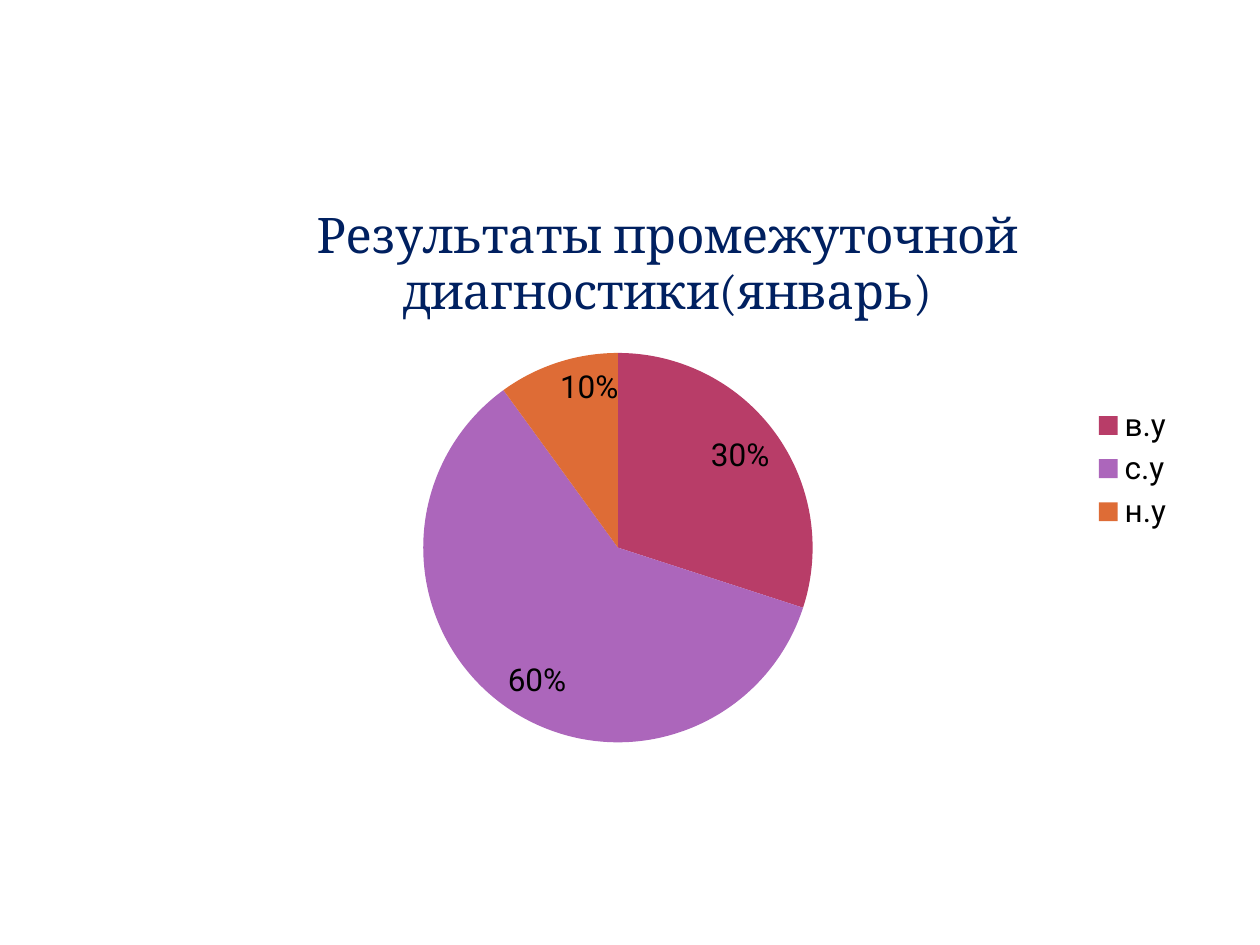
from dataclasses import dataclass

from pptx import Presentation
from pptx.chart.data import CategoryChartData
from pptx.dml.color import RGBColor
from pptx.enum import chart as ch
from pptx.util import Inches, Pt

NAVY = RGBColor(0x00, 0x20, 0x60)
BLACK = RGBColor(0x00, 0x00, 0x00)
CRIMSON = RGBColor(0xB8, 0x3D, 0x68)
VIOLET = RGBColor(0xAC, 0x66, 0xBB)
ORANGE = RGBColor(0xDE, 0x6C, 0x36)


@dataclass(frozen=True)
class Level:
    label: str
    percent: int
    color: RGBColor


LEVELS = [
    Level("в.у", 30, CRIMSON),
    Level("с.у", 60, VIOLET),
    Level("н.у", 10, ORANGE),
]


def style_font(font, name: str, size: int, color: RGBColor) -> None:
    font.name = name
    font.size = Pt(size)
    font.bold = False
    font.color.rgb = color


def add_diagnostics(slide, levels: list[Level]) -> None:
    results = CategoryChartData()
    results.categories = [level.label for level in levels]
    results.add_series("Series 1", [level.percent for level in levels])
    diagnostics = slide.shapes.add_chart(
        ch.XL_CHART_TYPE.PIE, Inches(1.17), Inches(1.41),
        Inches(8.25), Inches(4.62), results,
    ).chart
    style_font(diagnostics.font, "Roboto", 18, BLACK)

    diagnostics.has_title = True
    heading = diagnostics.chart_title.text_frame.paragraphs[0].add_run()
    heading.text = "Результаты промежуточной диагностики(январь)"
    style_font(heading.font, "Cambria", 28, NAVY)
    diagnostics.chart_title.include_in_layout = False

    diagnostics.has_legend = True
    diagnostics.legend.position = ch.XL_LEGEND_POSITION.RIGHT
    diagnostics.legend.include_in_layout = False

    pie = diagnostics.plots[0]
    pie.vary_by_categories = True
    pie.has_data_labels = True
    shares = pie.data_labels
    shares.show_percentage = True
    shares.show_value = False
    shares.number_format = "0%"
    shares.number_format_is_linked = False
    shares.position = ch.XL_LABEL_POSITION.INSIDE_END

    for index, level in enumerate(levels):
        sector = pie.series[0].points[index].format
        sector.fill.solid()
        sector.fill.fore_color.rgb = level.color
        sector.line.fill.background()


def main() -> None:
    deck = Presentation()
    deck.slide_width = Inches(10)
    deck.slide_height = Inches(7.5)
    slide = deck.slides.add_slide(deck.slide_layouts[6])
    add_diagnostics(slide, LEVELS)
    deck.save("out.pptx")


if __name__ == "__main__":
    main()
